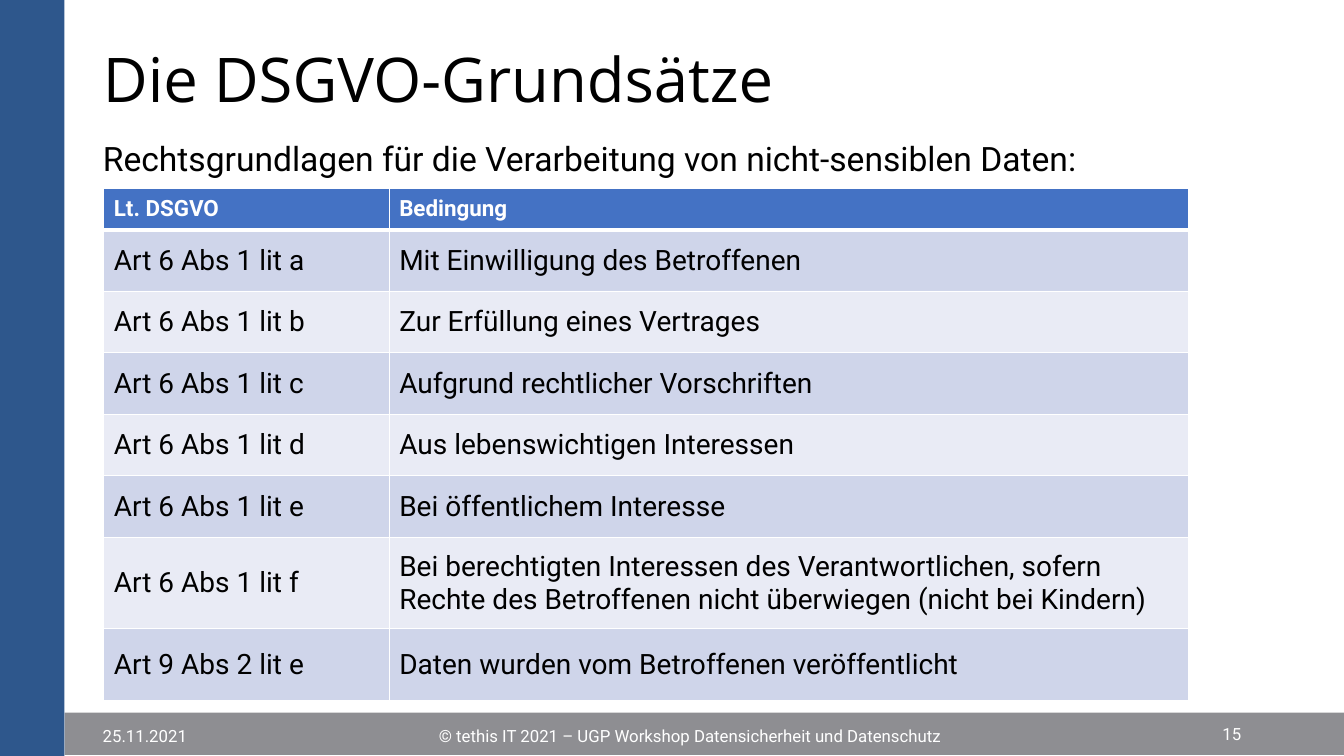
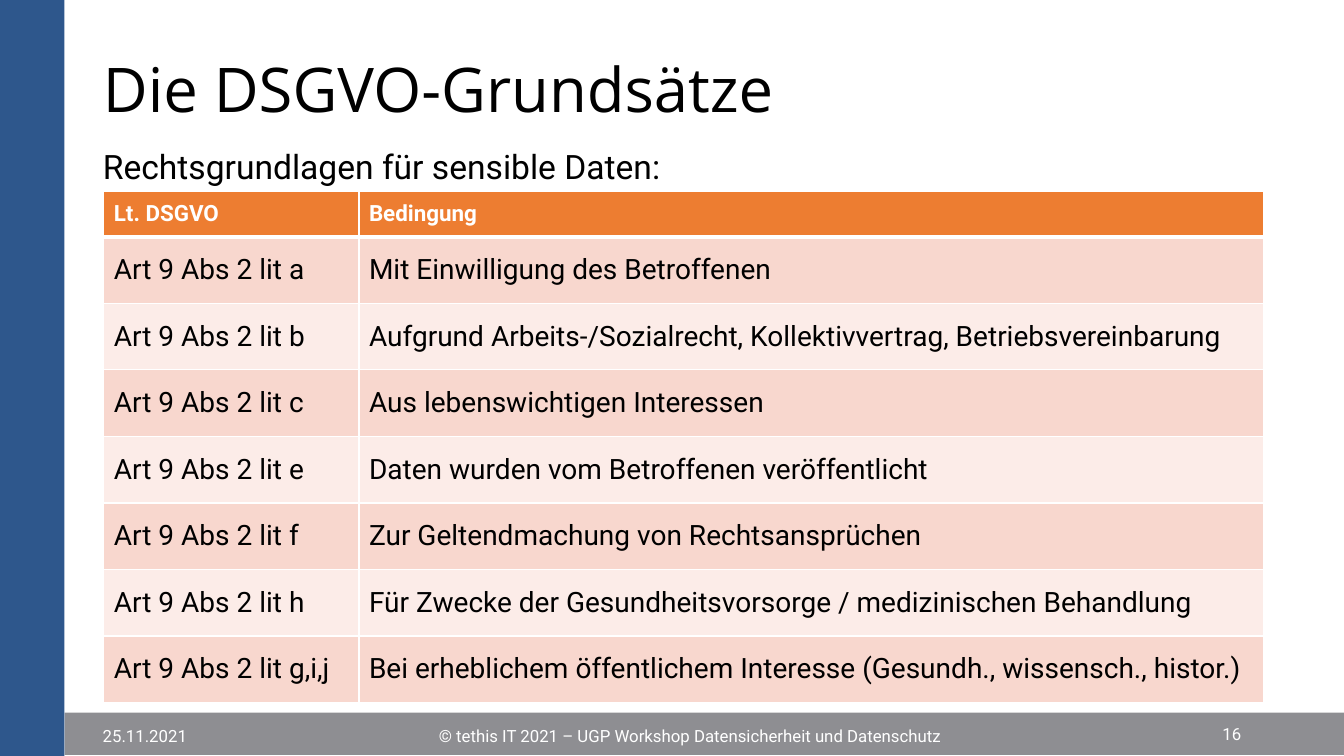
from dataclasses import dataclass

from lxml import etree
from pptx import Presentation
from pptx.dml.color import RGBColor
from pptx.enum.shapes import MSO_SHAPE
from pptx.enum.text import MSO_ANCHOR, MSO_AUTO_SIZE, PP_ALIGN
from pptx.oxml.ns import qn
from pptx.presentation import Presentation as Deck
from pptx.shapes.base import BaseShape
from pptx.slide import Slide
from pptx.table import _Cell as Cell
from pptx.text.text import TextFrame
from pptx.util import Inches, Pt

RECTANGLE = MSO_SHAPE.RECTANGLE
MIDDLE, TOP = MSO_ANCHOR.MIDDLE, MSO_ANCHOR.TOP
LEFT, CENTER, RIGHT = PP_ALIGN.LEFT, PP_ALIGN.CENTER, PP_ALIGN.RIGHT
NO_AUTOFIT = MSO_AUTO_SIZE.NONE


@dataclass(frozen=True)
class Theme:
    title_font: str = "Open Sans"
    body_font: str = "Roboto"
    title_size: int = 44
    subtitle_size: int = 24
    cell_size: int = 20
    header_size: int = 16
    footer_size: int = 12
    text: str = "000000"
    white: str = "FFFFFF"
    side_band: str = "2E578C"
    footer_band: str = "8E8E92"


@dataclass(frozen=True)
class Area:
    left: float
    top: float
    width: float
    height: float

    def lengths(self) -> tuple[int, int, int, int]:
        return (Inches(self.left), Inches(self.top),
                Inches(self.width), Inches(self.height))


@dataclass(frozen=True)
class Palette:
    header: str
    odd_row: str
    even_row: str


@dataclass(frozen=True)
class Band:
    area: Area
    color: str


@dataclass(frozen=True)
class FooterPart:
    area: Area
    text: str
    align: PP_ALIGN


@dataclass(frozen=True)
class LegalBasisPage:
    number: int
    subtitle: str
    title_area: Area
    body_area: Area
    table_area: Area
    palette: Palette
    column_widths: tuple[float, ...]
    row_heights: tuple[float, ...]
    conditions: tuple[tuple[str, str], ...]


THEME = Theme()
PAGE_WIDTH, PAGE_HEIGHT = 13.33, 7.5
TITLE = "Die DSGVO-Grundsätze"
TABLE_HEADER = ("Lt. DSGVO", "Bedingung")
BLUE = Palette("4472C4", "CFD5EA", "E9EBF5")
ORANGE = Palette("ED7D31", "F8D7CE", "FCECE8")

BANDS = (
    Band(Area(0.64, 7.07, 12.69, 0.42), THEME.footer_band),
    Band(Area(0, 0, 0.64, PAGE_HEIGHT), THEME.side_band),
)
FOOTER = (
    FooterPart(Area(0.92, 7.1, 1.61, 0.4), "25.11.2021", LEFT),
    FooterPart(Area(3.27, 7.1, 7.15, 0.4),
               "© tethis IT 2021 – UGP Workshop Datensicherheit und Datenschutz",
               CENTER),
)
NUMBER_AREA = Area(10.8, 7.08, 1.61, 0.4)

PAGES = (
    LegalBasisPage(
        number=15,
        subtitle="Rechtsgrundlagen für die Verarbeitung von nicht-sensiblen Daten:",
        title_area=Area(0.92, 0.4, 11.5, 0.84),
        body_area=Area(0.92, 1.36, 11.5, 5.6),
        table_area=Area(1.03, 1.87, 10.76, 5.08),
        palette=BLUE,
        column_widths=(2.83, 7.93),
        row_heights=(0.41,) + (0.61,) * 5 + (0.91, 0.71),
        conditions=(
            ("Art 6 Abs 1 lit a", "Mit Einwilligung des Betroffenen"),
            ("Art 6 Abs 1 lit b", "Zur Erfüllung eines Vertrages"),
            ("Art 6 Abs 1 lit c", "Aufgrund rechtlicher Vorschriften"),
            ("Art 6 Abs 1 lit d", "Aus lebenswichtigen Interessen"),
            ("Art 6 Abs 1 lit e", "Bei öffentlichem Interesse"),
            ("Art 6 Abs 1 lit f",
             "Bei berechtigten Interessen des Verantwortlichen, sofern Rechte "
             "des Betroffenen nicht überwiegen (nicht bei Kindern)"),
            ("Art 9 Abs 2 lit e", "Daten wurden vom Betroffenen veröffentlicht"),
        ),
    ),
    LegalBasisPage(
        number=16,
        subtitle="Rechtsgrundlagen für sensible Daten:",
        title_area=Area(0.92, 0.4, 11.5, 1.04),
        body_area=Area(0.92, 1.44, 11.5, 5.32),
        table_area=Area(1.03, 1.9, 11.5, 5.07),
        palette=ORANGE,
        column_widths=(2.53, 8.97),
        row_heights=(0.45,) + (0.66,) * 7,
        conditions=(
            ("Art 9 Abs 2 lit a", "Mit Einwilligung des Betroffenen"),
            ("Art 9 Abs 2 lit b",
             "Aufgrund Arbeits-/Sozialrecht, Kollektivvertrag, Betriebsvereinbarung"),
            ("Art 9 Abs 2 lit c", "Aus lebenswichtigen Interessen"),
            ("Art 9 Abs 2 lit e", "Daten wurden vom Betroffenen veröffentlicht"),
            ("Art 9 Abs 2 lit f", "Zur Geltendmachung von Rechtsansprüchen"),
            ("Art 9 Abs 2 lit h",
             "Für Zwecke der Gesundheitsvorsorge / medizinischen Behandlung"),
            ("Art 9 Abs 2 lit g,i,j",
             "Bei erheblichem öffentlichem Interesse (Gesundh., wissensch., histor.)"),
        ),
    ),
)


def write_text(frame: TextFrame, text: str, *, size: int, color: str = THEME.text,
               font: str = THEME.body_font, bold: bool = False,
               align: PP_ALIGN = LEFT, anchor: MSO_ANCHOR = MIDDLE,
               line_spacing: float = 1.0) -> None:
    frame.word_wrap = True
    frame.vertical_anchor = anchor
    paragraph = frame.paragraphs[0]
    paragraph.alignment = align
    paragraph.line_spacing = line_spacing
    paragraph.space_before = Pt(0)
    span = paragraph.add_run()
    span.text = text
    span.font.name = font
    span.font.size = Pt(size)
    span.font.bold = bold
    span.font.color.rgb = RGBColor.from_string(color)


def place(shape: BaseShape, area: Area) -> None:
    shape.left, shape.top, shape.width, shape.height = area.lengths()


def add_master_bands(deck: Deck, page: Slide) -> None:
    """Draw the bands on a page and move them behind everything on the master."""
    master_tree = deck.slide_master.shapes.element
    for index, band in enumerate(BANDS):
        box = page.shapes.add_shape(RECTANGLE, *band.area.lengths())
        box.shadow.inherit = False
        box.fill.solid()
        box.fill.fore_color.rgb = RGBColor.from_string(band.color)
        box.line.fill.background()
        box.element.nvSpPr.cNvPr.set("id", str(100 + index))
        master_tree.insert(2 + index, box.element)


def add_headings(page: Slide, content: LegalBasisPage) -> None:
    title, body = page.shapes.title, page.placeholders[1]
    place(title, content.title_area)
    place(body, content.body_area)
    for box in (title, body):
        box.text_frame.auto_size = NO_AUTOFIT
    write_text(title.text_frame, TITLE, size=THEME.title_size,
               font=THEME.title_font, line_spacing=0.9)
    properties = body.text_frame.paragraphs[0]._p.get_or_add_pPr()
    properties.set("marL", "0")
    properties.set("indent", "0")
    etree.SubElement(properties, qn("a:buNone"))
    write_text(body.text_frame, content.subtitle, size=THEME.subtitle_size,
               anchor=TOP, line_spacing=0.9)


def set_borders(cell: Cell, top: float, bottom: float) -> None:
    """Give a cell white borders, with its own widths in points above and below."""
    properties = cell._tc.get_or_add_tcPr()
    widths = {"lnL": 1, "lnR": 1, "lnT": top, "lnB": bottom}
    for index, (side, width) in enumerate(widths.items()):
        line = etree.Element(qn(f"a:{side}"), w=str(Pt(width)))
        fill = etree.SubElement(line, qn("a:solidFill"))
        etree.SubElement(fill, qn("a:srgbClr"), val=THEME.white)
        properties.insert(index, line)


def add_conditions_table(page: Slide, content: LegalBasisPage) -> None:
    rows = (TABLE_HEADER, *content.conditions)
    table = page.shapes.add_table(len(rows), len(TABLE_HEADER),
                                  *content.table_area.lengths()).table
    table.horz_banding = False
    for column, width in zip(table.columns, content.column_widths):
        column.width = Inches(width)
    for row, height in zip(table.rows, content.row_heights):
        row.height = Inches(height)

    palette = content.palette
    for row_index, texts in enumerate(rows):
        is_header = row_index == 0
        band_color = palette.odd_row if row_index % 2 else palette.even_row
        fill_color = palette.header if is_header else band_color
        for column_index, text in enumerate(texts):
            cell = table.cell(row_index, column_index)
            cell.fill.solid()
            cell.fill.fore_color.rgb = RGBColor.from_string(fill_color)
            set_borders(cell, top=3 if row_index == 1 else 1,
                        bottom=3 if is_header else 1)
            cell.vertical_anchor = MIDDLE
            write_text(cell.text_frame, text, bold=is_header,
                       size=THEME.header_size if is_header else THEME.cell_size,
                       color=THEME.white if is_header else THEME.text)


def add_footer(page: Slide, number: int) -> None:
    for part in (*FOOTER, FooterPart(NUMBER_AREA, str(number), RIGHT)):
        box = page.shapes.add_textbox(*part.area.lengths())
        write_text(box.text_frame, part.text, size=THEME.footer_size,
                   color=THEME.white, align=part.align)


def main() -> None:
    deck = Presentation()
    deck.slide_width = Inches(PAGE_WIDTH)
    deck.slide_height = Inches(PAGE_HEIGHT)
    title_and_content = deck.slide_layouts[1]
    for content in PAGES:
        page = deck.slides.add_slide(title_and_content)
        add_headings(page, content)
        add_footer(page, content.number)
        add_conditions_table(page, content)
    add_master_bands(deck, deck.slides[0])
    deck.save("out.pptx")


if __name__ == "__main__":
    main()
